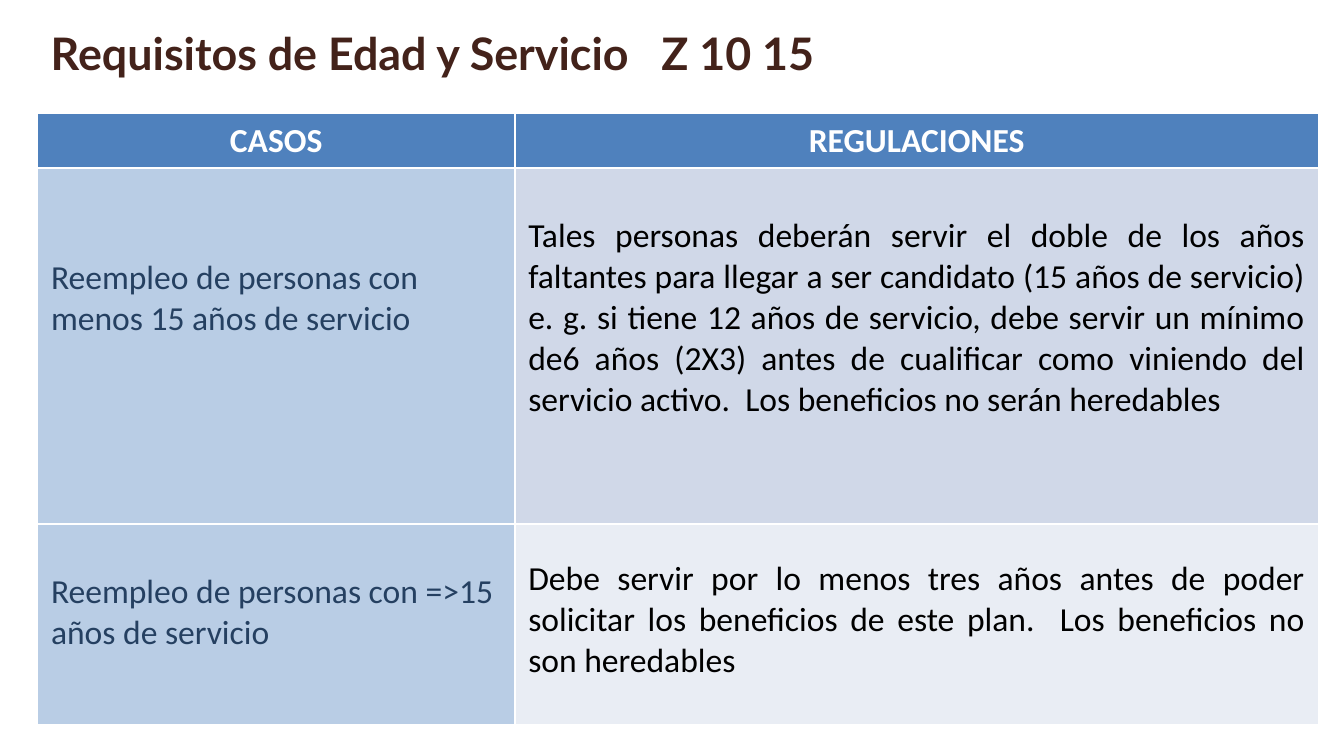
import pptx
import pptx.dml.color
import pptx.enum.text
import pptx.oxml
import pptx.oxml.ns
import pptx.util
from pptx.util import Cm

ALIGN = pptx.enum.text.PP_ALIGN
COLUMN_WIDTHS = (9.02, 15.19)
ROW_HEIGHTS = (1.04, 6.73, 3.79)
HEADINGS = ("CASOS", "REGULACIONES")
# Each body row: case, its top margin, rule, its top margin, rule fill
BODY_ROWS = (
    ("Reempleo de personas con menos 15 años de servicio", 1.68,
     "Tales personas deberán servir el doble de los años faltantes para llegar "
     "a ser candidato (15 años de servicio) e. g. si tiene 12 años de servicio, "
     "debe servir un mínimo de6 años (2X3) antes de cualificar como viniendo del "
     "servicio activo.  Los beneficios no serán heredables", 0.9, "D0D8E8"),
    ("Reempleo de personas con =>15 años de servicio", 0.9,
     "Debe servir por lo menos tres años antes de poder solicitar los beneficios "
     "de este plan.  Los beneficios no son heredables", 0.64, "E9EDF4"),
)


def rgb(value):
    return pptx.dml.color.RGBColor.from_string(value)


def write_text(text_frame, text, *, size=18, font="Calibri", color="000000",
               bold=False, align=ALIGN.LEFT):
    text_frame.word_wrap = True
    paragraph = text_frame.paragraphs[0]
    paragraph.alignment = align
    run = paragraph.add_run()
    run.text = text
    run.font.size = pptx.util.Pt(size)
    run.font.name = font
    run.font.bold = bold
    run.font.color.rgb = rgb(color)


def add_title(slide, text):
    box = slide.shapes.add_textbox(Cm(0.71), Cm(0.36), Cm(16), Cm(1.27))
    write_text(box.text_frame, text, size=24, font="Lato", color="43221A", bold=True)


def set_borders(cell, color, width):
    """Put a solid line on all four sides; call before filling the cell."""
    properties = cell._tc.get_or_add_tcPr()
    for side in ("lnL", "lnR", "lnT", "lnB"):
        properties.append(pptx.oxml.parse_xml(
            f'<a:{side} {pptx.oxml.ns.nsdecls("a")} w="{pptx.util.Pt(width)}">'
            f'<a:solidFill><a:srgbClr val="{color}"/></a:solidFill></a:{side}>'))


def fill_cell(cell, text, fill, top_margin=0.13, **text_format):
    set_borders(cell, "FFFFFF", 1)
    cell.fill.solid()
    cell.fill.fore_color.rgb = rgb(fill)
    cell.margin_top = Cm(top_margin)
    write_text(cell.text_frame, text, **text_format)


def add_rules_table(slide):
    table = slide.shapes.add_table(
        len(ROW_HEIGHTS), len(COLUMN_WIDTHS), Cm(0.71), Cm(2.14),
        Cm(sum(COLUMN_WIDTHS)), Cm(sum(ROW_HEIGHTS))).table
    for column, width in zip(table.columns, COLUMN_WIDTHS):
        column.width = Cm(width)
    for row, height in zip(table.rows, ROW_HEIGHTS):
        row.height = Cm(height)

    for index, heading in enumerate(HEADINGS):
        fill_cell(table.cell(0, index), heading, "4F81BD",
                  color="FFFFFF", bold=True, align=ALIGN.CENTER)
    for index, (case, case_top, rule, rule_top, rule_fill) in enumerate(BODY_ROWS, 1):
        fill_cell(table.cell(index, 0), case, "B9CDE5", case_top, color="254061")
        fill_cell(table.cell(index, 1), rule, rule_fill, rule_top, align=ALIGN.JUSTIFY)


def main():
    presentation = pptx.Presentation()
    presentation.slide_width = Cm(25.4)
    presentation.slide_height = Cm(14.29)
    slide = presentation.slides.add_slide(presentation.slide_layouts[6])
    add_title(slide, "Requisitos de Edad y Servicio   Z 10 15")
    add_rules_table(slide)
    presentation.save("out.pptx")


if __name__ == "__main__":
    main()
